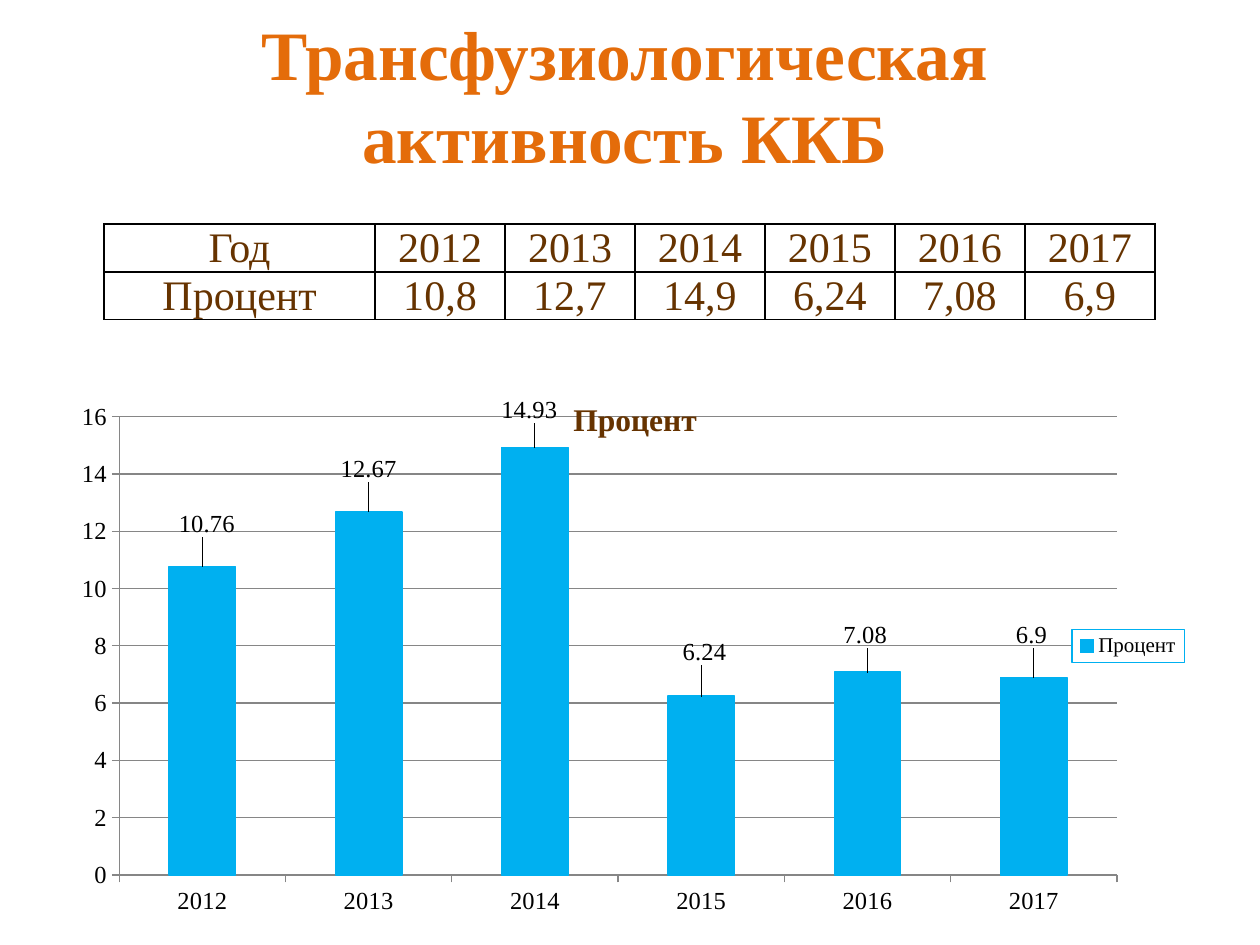
from lxml import etree
from pptx import Presentation
from pptx import util as u
from pptx.chart.data import CategoryChartData
from pptx.dml.color import RGBColor
from pptx.enum import chart as ch, text
from pptx.oxml import parse_xml
from pptx.oxml.ns import nsdecls, qn

# Content
TITLE = "Трансфузиологическая активность ККБ"
SERIES = "Процент"
YEARS = ["2012", "2013", "2014", "2015", "2016", "2017"]
VALUES = [10.76, 12.67, 14.93, 6.24, 7.08, 6.9]
ROWS = [
    ["Год", *YEARS],
    [SERIES, "10,8", "12,7", "14,9", "6,24", "7,08", "6,9"],
]
# Shift of each value label, in hundredths of the chart's width and height
LABEL_SHIFTS = [(0.4, -4.4), (0, -4.5), (-0.5, -3.4),
                (0.3, -4.7), (-0.2, -3.4), (-0.2, -4.4)]

THEME = {
    "font": "Times New Roman",
    "title": "E46C0A", "brown": "663300", "bar": "00B0F0",
    "black": "000000", "white": "FFFFFF", "axis": "868686",
    "title_pt": 39.6, "table_pt": 24, "chart_title_pt": 18,
    "axis_pt": 14, "legend_pt": 12, "chart_pt": 10,
}


def rgb(name):
    return RGBColor.from_string(THEME[name])


def style(font, size, color, bold=False):
    font.name = THEME["font"]
    font.size = u.Pt(THEME[size])
    font.color.rgb = rgb(color)
    font.bold = bold


def set_layout(after, x, y, w=None, h=None, inner=False, edge=True):
    """Place a chart part by hand; the layout goes after the given element."""
    parent = after.getparent()
    for old in parent.findall(qn("c:layout")):
        parent.remove(old)
    layout = parse_xml(f"<c:layout {nsdecls('c')}><c:manualLayout/></c:layout>")
    items = [("layoutTarget", "inner")] if inner else []
    items += [("xMode", "edge"), ("yMode", "edge")] if edge else []
    items += [("x", x), ("y", y)]
    items += [("w", w), ("h", h)] if w else []
    for tag, val in items:
        etree.SubElement(layout[0], qn("c:" + tag)).set("val", str(val))
    after.addnext(layout)


def border_cell(cell):
    tc_pr = cell._tc.get_or_add_tcPr()
    for i, side in enumerate(("lnL", "lnR", "lnT", "lnB")):
        tc_pr.insert(i, parse_xml(
            f'<a:{side} {nsdecls("a")} w="12700"><a:solidFill>'
            f'<a:srgbClr val="{THEME["black"]}"/></a:solidFill></a:{side}>'))


def add_title(slide):
    sp = slide.shapes.title
    sp.left, sp.top, sp.width, sp.height = u.Cm(3.3), 0, u.Cm(18.6), u.Cm(3.81)
    tf = sp.text_frame
    tf.text = TITLE
    tf.word_wrap = True
    tf.auto_size = text.MSO_AUTO_SIZE.NONE
    tf.vertical_anchor = text.MSO_ANCHOR.MIDDLE
    p = tf.paragraphs[0]
    p.alignment = text.PP_ALIGN.CENTER
    style(p.font, "title_pt", "title", bold=True)


def add_table(slide):
    head_w, year_w, row_h = u.Cm(5.46), u.Cm(2.62), u.Cm(0.96)
    table = slide.shapes.add_table(
        len(ROWS), len(ROWS[0]), u.Cm(2.1), u.Cm(4.52),
        head_w + year_w * len(YEARS), row_h * len(ROWS)).table
    for i, col in enumerate(table.columns):
        col.width = year_w if i else head_w
    for row, values in zip(table.rows, ROWS):
        row.height = row_h
        for cell, value in zip(row.cells, values):
            cell.text = value
            cell.margin_left = cell.margin_right = cell.margin_top = u.Cm(0.02)
            cell.margin_bottom = 0
            cell.vertical_anchor = text.MSO_ANCHOR.BOTTOM
            cell.fill.solid()
            cell.fill.fore_color.rgb = rgb("white")
            border_cell(cell)
            p = cell.text_frame.paragraphs[0]
            p.alignment = text.PP_ALIGN.CENTER
            style(p.font, "table_pt", "brown")


def add_chart(slide):
    data = CategoryChartData()
    data.categories = YEARS
    data.add_series(SERIES, VALUES)
    chart = slide.shapes.add_chart(
        ch.XL_CHART_TYPE.COLUMN_CLUSTERED, u.Cm(1.5), u.Cm(7.52),
        u.Cm(22.6), u.Cm(11), data).chart
    style(chart.font, "chart_pt", "black")

    # Plot area and bars
    plot = chart.plots[0]
    plot.gap_width = 150
    plot.vary_by_categories = False
    area = chart._chartSpace.chart.plotArea
    for old in area.findall(qn("c:layout")):
        area.remove(old)
    marker = etree.Element(qn("c:layout"))
    area.insert(0, marker)
    set_layout_first = parse_xml(f"<c:extLst {nsdecls('c')}/>")
    area.insert(0, set_layout_first)
    set_layout(set_layout_first, 0.04, 0.08, 0.89, 0.84, inner=True)
    area.remove(set_layout_first)
    series = plot.series[0]
    series.format.fill.solid()
    series.format.fill.fore_color.rgb = rgb("bar")
    series.format.line.color.rgb = rgb("bar")
    series.format.line.width = u.Pt(0.75)

    # Value labels
    labels = series.data_labels
    labels.show_value = True
    style(labels.font, "axis_pt", "black")
    for i, (dx, dy) in enumerate(LABEL_SHIFTS):
        label = series.points[i].data_label
        style(label.font, "axis_pt", "black")
        label.position = ch.XL_LABEL_POSITION.OUTSIDE_END
        idx = labels._element.findall(qn("c:dLbl"))[i].find(qn("c:idx"))
        set_layout(idx, dx / 100, dy / 100, edge=False)

    # Axes
    for axis in (chart.category_axis, chart.value_axis):
        style(axis.tick_labels.font, "axis_pt", "black")
        axis.major_tick_mark = ch.XL_TICK_MARK.OUTSIDE
        axis.minor_tick_mark = ch.XL_TICK_MARK.NONE
        axis.format.line.color.rgb = rgb("axis")
    axis.minimum_scale, axis.maximum_scale, axis.major_unit = 0, 16, 2
    axis.has_major_gridlines = True
    axis.major_gridlines.format.line.color.rgb = rgb("axis")

    # Chart title, laid over the plot
    title = chart.chart_title
    title.text_frame.text = SERIES
    style(title.text_frame.paragraphs[0].font, "chart_title_pt", "brown", bold=True)
    title.include_in_layout = False
    element = title._element
    set_layout(element.find(qn("c:tx")), 0.44, 0.04)
    for old in element.findall(qn("c:overlay")):
        element.remove(old)
    overlay = etree.Element(qn("c:overlay"))
    overlay.set("val", "1")
    element.find(qn("c:layout")).addnext(overlay)

    # Legend
    chart.has_legend = True
    legend = chart.legend
    legend.position = ch.XL_LEGEND_POSITION.RIGHT
    legend.include_in_layout = False
    style(legend.font, "legend_pt", "black")
    element = legend._element
    set_layout(element.find(qn("c:legendPos")), 0.89, 0.47, 0.1, 0.06)
    element.find(qn("c:overlay")).addnext(parse_xml(
        f'<c:spPr {nsdecls("c", "a")}><a:solidFill><a:srgbClr val="{THEME["white"]}"/>'
        f'</a:solidFill><a:ln w="9525"><a:solidFill><a:srgbClr val="{THEME["bar"]}"/>'
        '</a:solidFill></a:ln></c:spPr>'))


def main():
    prs = Presentation()
    prs.slide_width, prs.slide_height = u.Cm(25.4), u.Cm(19.05)
    slide = prs.slides.add_slide(prs.slide_layouts[5])
    add_title(slide)
    add_chart(slide)
    add_table(slide)
    prs.save("out.pptx")


if __name__ == "__main__":
    main()
